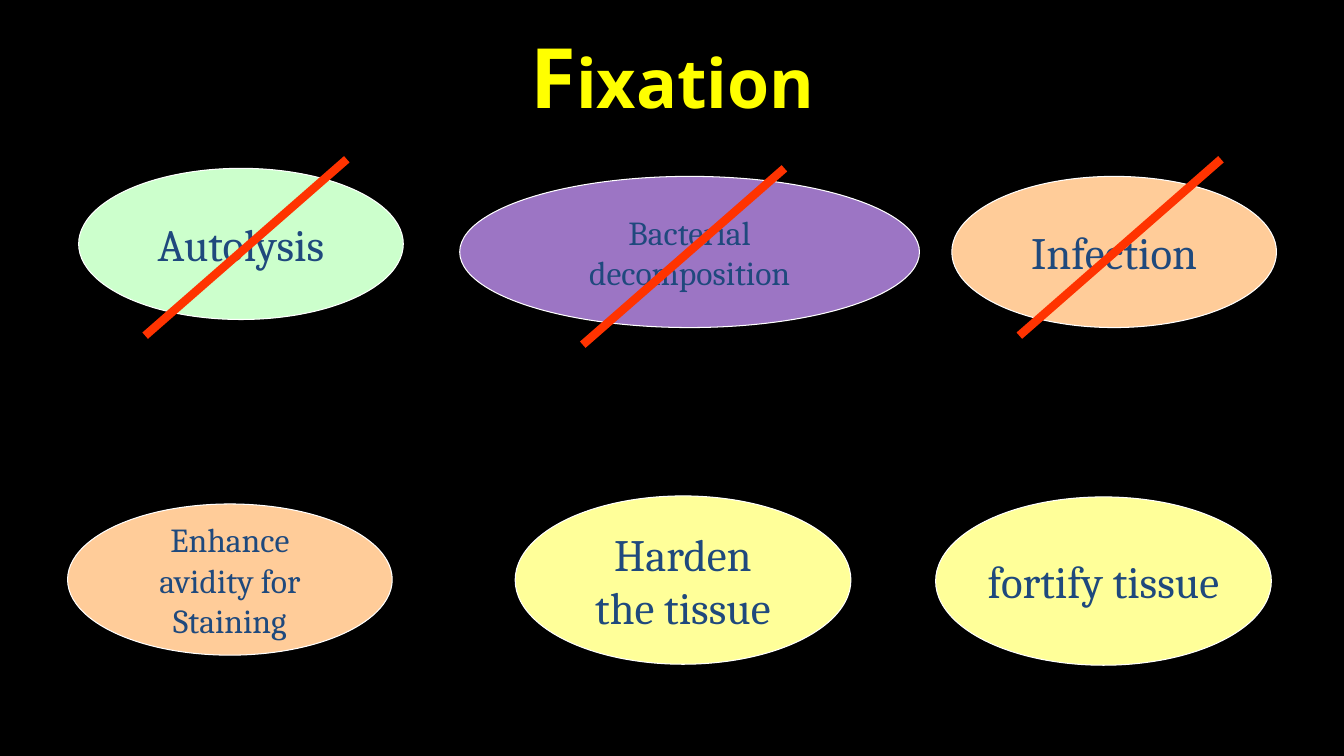
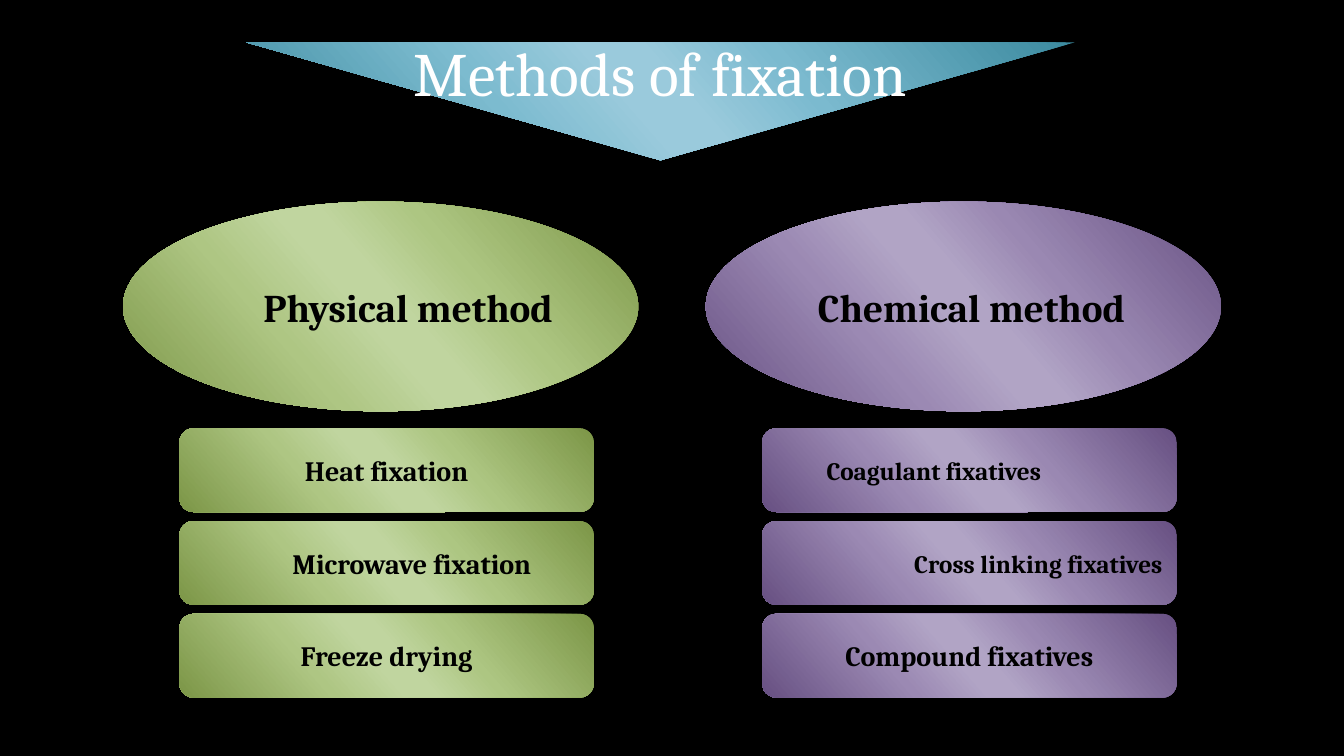
"""Build two slides on tissue fixation: its purposes and its methods."""
from dataclasses import dataclass

from lxml.etree import SubElement
from pptx import Presentation
from pptx.dml.color import RGBColor
from pptx.enum.shapes import MSO_CONNECTOR as Connector, MSO_SHAPE as Preset
from pptx.enum.text import MSO_ANCHOR as Anchor, MSO_AUTO_SIZE as AutoSize, PP_ALIGN as Align
from pptx.oxml.ns import qn
from pptx.util import Inches, Pt

Stops = tuple[tuple[int, str], ...]


def sheen(edge: str, inner: str, light: str, outer: str) -> Stops:
    """Return gradient stops with a light band in the middle."""
    return (0, edge), (33, inner), (47, light), (53, light), (68, outer), (100, edge)


@dataclass(frozen=True)
class Theme:
    """Colours, fonts and type sizes of the deck."""
    background: str = "000000"
    title: str = "FFFF00"
    white: str = "FFFFFF"
    black: str = "000000"
    navy: str = "1F497D"
    mint: str = "CCFFCC"
    lilac: str = "CC99FF"
    peach: str = "FFCC99"
    lemon: str = "FFFF99"
    strike: str = "FF3300"
    teal: Stops = sheen("3C8A9F", "7BBACF", "9ACADC", "7CBBCF")
    green: Stops = sheen("7C9647", "ADC682", "C0D59F", "AEC683")
    purple: Stops = sheen("675082", "9A88B2", "B1A4C5", "9B89B3")
    title_font: str = "Noto Sans"
    body_font: str = "Cambria"
    initial_size: float = 59.4
    title_size: float = 48.6
    banner_size: float = 44
    large: float = 32
    heading: float = 28
    medium: float = 24
    item: float = 20
    small_item: float = 18
    sheen_angle: float = 221


THEME = Theme()


@dataclass(frozen=True)
class Label:
    """Wording and type style of one shape."""
    text: str
    size: float
    color: str = THEME.black
    bold: bool = False
    align: Align = Align.CENTER
    indent: float = 0
    wrap: bool = False


@dataclass(frozen=True)
class Area:
    """Position and size in inches."""
    left: float
    top: float
    width: float
    height: float


@dataclass(frozen=True)
class Purpose:
    """One ellipse on the purposes slide."""
    label: Label
    area: Area
    color: str
    opacity: int = 100


@dataclass(frozen=True)
class Method:
    """One column on the methods slide."""
    left: float
    stops: Stops
    heading: Label
    items: tuple[Label, ...]


def purpose_label(text: str, size: float = THEME.large, wrap: bool = False) -> Label:
    """Return a navy label."""
    return Label(text, size, THEME.navy, wrap=wrap)


def method_label(text: str, size: float = THEME.item, align: Align = Align.CENTER,
                 indent: float = 0) -> Label:
    """Return a bold black label."""
    return Label(text, size, bold=True, align=align, indent=indent)


PURPOSES = (
    Purpose(purpose_label("Harden\nthe tissue"), Area(5.11, 4.92, 3.33, 1.67), THEME.lemon),
    Purpose(purpose_label("Bacterial decomposition", THEME.medium, True),
            Area(4.56, 1.75, 4.56, 1.5), THEME.lilac, 77),
    Purpose(purpose_label("Autolysis"), Area(0.78, 1.67, 3.22, 1.5), THEME.mint),
    Purpose(purpose_label("Enhance\navidity for\nStaining", THEME.medium),
            Area(0.67, 5, 3.22, 1.5), THEME.peach),
    Purpose(purpose_label("Infection"), Area(9.44, 1.75, 3.22, 1.5), THEME.peach),
    Purpose(purpose_label("fortify tissue"), Area(9.28, 4.93, 3.33, 1.67), THEME.lemon),
)
STRIKES = ((1.44, 1.58), (5.78, 1.67), (10.11, 1.58))
STRIKE_WIDTH, STRIKE_HEIGHT = 2, 1.75

METHODS = (
    Method(1.22, THEME.green, method_label("Physical method", THEME.heading, Align.RIGHT), (
        method_label("Heat fixation"),
        method_label("Microwave fixation", indent=0.5),
        method_label("Freeze drying"))),
    Method(7, THEME.purple, method_label("Chemical method", THEME.heading, indent=0.16), (
        method_label("Coagulant fixatives", THEME.small_item, Align.LEFT, 0.5),
        method_label("Cross linking fixatives", THEME.small_item, Align.RIGHT, 0.5),
        method_label("Compound fixatives"))),
)
ITEM_INSET, ITEM_TOP, ITEM_PITCH = 0.56, 4.25, 0.92


def rgb(color: str) -> RGBColor:
    """Return a colour from its hex code."""
    return RGBColor.from_string(color)


def add_label_shape(page, preset: Preset, area: Area, label: Label):
    """Add a shape without shadow or outline and write its label."""
    shape = page.shapes.add_shape(preset, Inches(area.left), Inches(area.top),
                                  Inches(area.width), Inches(area.height))
    shape.shadow.inherit = False
    shape.line.fill.background()
    frame = shape.text_frame
    frame.text = label.text
    frame.word_wrap = label.wrap
    frame.vertical_anchor = Anchor.MIDDLE
    for para in frame.paragraphs:
        para.alignment = label.align
        para.font.name = THEME.body_font
        para.font.size = Pt(label.size)
        para.font.bold = label.bold
        para.font.color.rgb = rgb(label.color)
        if label.indent:
            para._p.get_or_add_pPr().set("marL", str(Inches(label.indent)))
    return shape


def fill_sheen(shape, stops: Stops) -> None:
    """Fill a shape with a slanted gradient."""
    shape.fill.gradient()
    shape.fill.gradient_angle = THEME.sheen_angle
    stop_list = shape._element.spPr.find(qn("a:gradFill")).find(qn("a:gsLst"))
    for old_stop in list(stop_list):
        stop_list.remove(old_stop)
    for position, color in stops:
        stop = SubElement(stop_list, qn("a:gs"), pos=str(position * 1000))
        SubElement(stop, qn("a:srgbClr"), val=color)


def add_purpose(page, purpose: Purpose) -> None:
    """Draw one outlined ellipse."""
    shape = add_label_shape(page, Preset.OVAL, purpose.area, purpose.label)
    shape.fill.solid()
    shape.fill.fore_color.rgb = rgb(purpose.color)
    shape.line.color.rgb = rgb(THEME.white)
    shape.line.width = Pt(0.75)
    if purpose.opacity < 100:
        color = shape._element.spPr.find(qn("a:solidFill")).find(qn("a:srgbClr"))
        SubElement(color, qn("a:alpha"), val=str(purpose.opacity * 1000))


def add_strike(page, left: float, top: float) -> None:
    """Draw one slanted line that crosses out an ellipse."""
    line = page.shapes.add_connector(
        Connector.STRAIGHT, Inches(left + STRIKE_WIDTH), Inches(top),
        Inches(left), Inches(top + STRIKE_HEIGHT))
    line.line.color.rgb = rgb(THEME.strike)
    line.line.width = Pt(6)
    SubElement(line._element.spPr, qn("a:effectLst"))


def add_title(page) -> None:
    """Write the title with its enlarged initial."""
    title = page.shapes.title
    title.left, title.top = Inches(0.67), Inches(0.33)
    title.width, title.height = Inches(12), Inches(0.83)
    frame = title.text_frame
    frame.auto_size = AutoSize.NONE
    frame.vertical_anchor = Anchor.MIDDLE
    para = frame.paragraphs[0]
    para.alignment = Align.CENTER
    para.font.name = THEME.title_font
    para.font.bold = True
    para.font.color.rgb = rgb(THEME.title)
    for text, size in (("F", THEME.initial_size), ("ixation", THEME.title_size)):
        span = para.add_run()
        span.text = text
        span.font.size = Pt(size)


def add_method(page, method: Method) -> None:
    """Draw one heading ellipse with its stack of items."""
    heading = add_label_shape(page, Preset.OVAL, Area(method.left, 2, 5.11, 2.08),
                              method.heading)
    fill_sheen(heading, method.stops)
    for row, label in enumerate(method.items):
        area = Area(method.left + ITEM_INSET, ITEM_TOP + row * ITEM_PITCH, 4.11, 0.83)
        fill_sheen(add_label_shape(page, Preset.ROUNDED_RECTANGLE, area, label), method.stops)


def build_purposes(deck) -> None:
    """Build the slide on what fixation prevents and achieves."""
    page = deck.slides.add_slide(deck.slide_layouts.get_by_name("Title Only"))
    add_title(page)
    for purpose in PURPOSES:
        add_purpose(page, purpose)
    for left, top in STRIKES:
        add_strike(page, left, top)


def build_methods(deck) -> None:
    """Build the slide on physical and chemical methods."""
    page = deck.slides.add_slide(deck.slide_layouts.get_by_name("Blank"))
    banner = add_label_shape(page, Preset.FLOWCHART_MERGE, Area(2.44, 0.42, 8.22, 1.17),
                             Label("Methods of fixation", THEME.banner_size, THEME.white))
    fill_sheen(banner, THEME.teal)
    for method in METHODS:
        add_method(page, method)


def main() -> None:
    """Build and save the deck."""
    deck = Presentation()
    deck.slide_width, deck.slide_height = Inches(13.33), Inches(7.5)
    backdrop = deck.slide_master.background.fill
    backdrop.solid()
    backdrop.fore_color.rgb = rgb(THEME.background)
    build_purposes(deck)
    build_methods(deck)
    deck.save("out.pptx")


if __name__ == "__main__":
    main()
